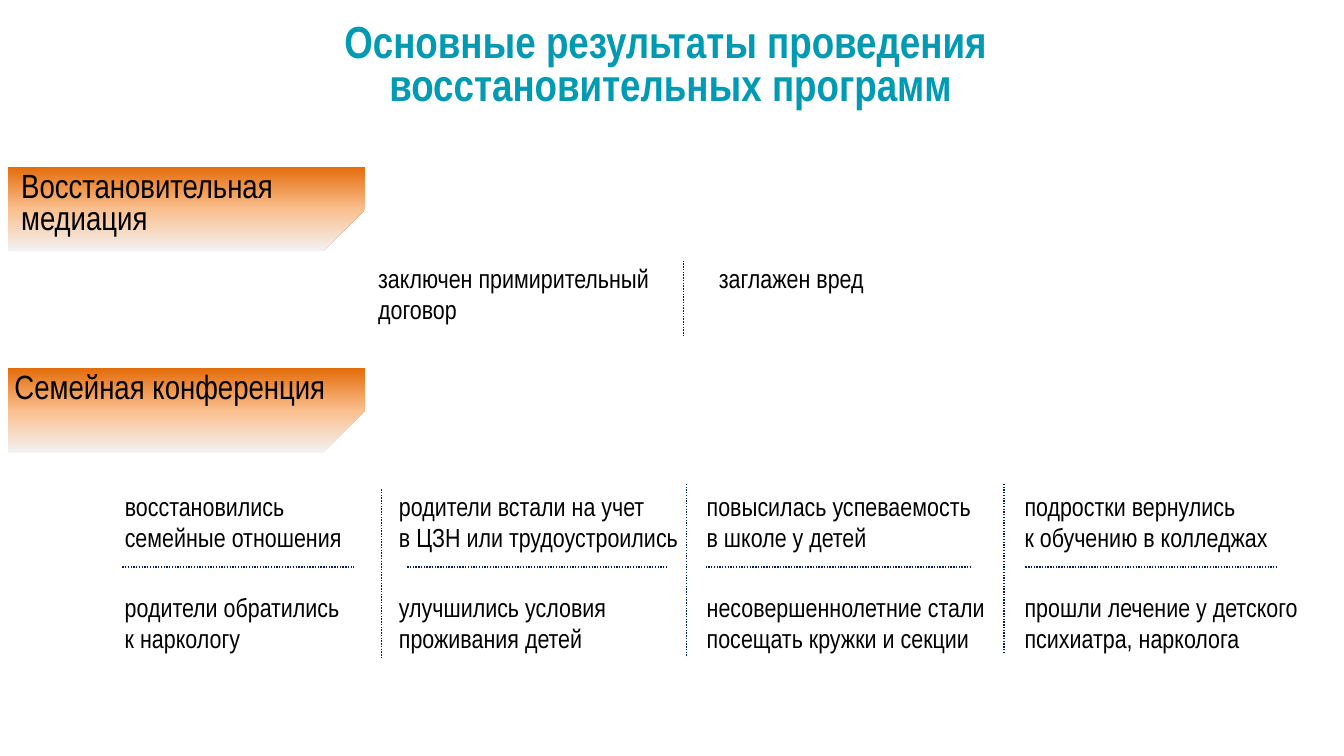
from lxml import etree
from pptx import Presentation
from pptx.dml.color import RGBColor
from pptx.enum.dml import MSO_LINE
from pptx.enum.shapes import MSO_CONNECTOR, MSO_SHAPE
from pptx.enum.text import MSO_ANCHOR, MSO_AUTO_SIZE, PP_ALIGN
from pptx.oxml.ns import qn
from pptx.util import Inches, Pt

STRAIGHT = MSO_CONNECTOR.STRAIGHT
SNIPPED = MSO_SHAPE.SNIP_1_RECTANGLE
DOTTED = MSO_LINE.ROUND_DOT
TOP = MSO_ANCHOR.TOP
GROW, FIXED = MSO_AUTO_SIZE.SHAPE_TO_FIT_TEXT, MSO_AUTO_SIZE.NONE
LEFT, CENTER = PP_ALIGN.LEFT, PP_ALIGN.CENTER

FONT = "Arial Narrow"
TEAL, NAVY, BLACK = "009AB3", "002060", "000000"
BANNER_STOPS = [(0, "E46C0A"), (51, "FAC090"), (100, "F2F2F2")]
COLUMNS, ROWS = 100, 56.25  # grid of the slide, 0.1 inch a cell
BANNER_LEFT, BANNER_WIDTH, BANNER_HEIGHT = 0.6, 26.6, 6.3
RESULT_ROWS = (36, 43.5)
RESULT_HEIGHT = 5.7

# left edge, then (width, lines) of the upper and the lower result
RESULTS = [
    (8.3, (18.5, ["восстановились", "семейные отношения"]),
          (18.6, ["родители обратились", "к наркологу"])),
    (28.7, (24.5, ["родители встали на учет", "в ЦЗН или трудоустроились"]),
           (19.5, ["улучшились условия", "проживания детей"])),
    (51.6, (22.4, ["повысилась успеваемость", "в школе у детей"]),
           (23.5, ["несовершеннолетние стали", "посещать кружки и секции"])),
    (75.25, (20.4, ["подростки вернулись", "к обучению в колледжах"]),
            (23.2, ["прошли лечение у детского", "психиатра, нарколога"])),
]
COLUMN_DIVIDERS = [(28.4, 36.4, 48.9), (51.1, 36, 48.9), (74.7, 36, 48.5)]
ROW_DIVIDERS = [(9.1, 26.3), (30.3, 49.6), (52.5, 72.3), (76.3, 95)]


def rgb(hex_color):
    return RGBColor.from_string(hex_color)


def write(tf, lines, size=14, color=BLACK, bold=False, align=LEFT, spacing=None):
    for i, line in enumerate(lines):
        p = tf.paragraphs[0] if i == 0 else tf.add_paragraph()
        p.alignment = align
        p.line_spacing = spacing
        r = p.add_run()
        r.text = line
        r.font.name, r.font.size, r.font.bold = FONT, Pt(size), bold
        r.font.color.rgb = rgb(color)


class SlideBuilder:
    def __init__(self, prs):
        self.cell_w = prs.slide_width / COLUMNS
        self.cell_h = prs.slide_height / ROWS
        self.s = prs.slides.add_slide(prs.slide_layouts[5])

    def box(self, x, y, w, h):
        """Turn grid columns and rows into slide lengths."""
        return (round(x * self.cell_w), round(y * self.cell_h),
                round(w * self.cell_w), round(h * self.cell_h))

    def title(self, x, y, w, h, lines, **style):
        sp = self.s.shapes.title
        sp.left, sp.top, sp.width, sp.height = self.box(x, y, w, h)
        tf = sp.text_frame
        tf.word_wrap, tf.auto_size, tf.vertical_anchor = True, FIXED, TOP
        write(tf, lines, **style)

    def text(self, x, y, w, h, lines, wrap=True, **style):
        tf = self.s.shapes.add_textbox(*self.box(x, y, w, h)).text_frame
        tf.word_wrap, tf.auto_size = wrap, GROW
        write(tf, lines, **style)

    def divider(self, x1, y1, x2, y2):
        start_x, start_y, end_x, end_y = self.box(x1, y1, x2, y2)
        line = self.s.shapes.add_connector(STRAIGHT, start_x, start_y, end_x, end_y)
        line.line.color.rgb = rgb(NAVY)
        line.line.width = Pt(0.75)
        line.line.dash_style = DOTTED
        etree.SubElement(line._element.spPr, qn("a:effectLst"))

    def banner(self, y):
        """Orange band with its lower right corner cut off."""
        sp = self.s.shapes.add_shape(
            SNIPPED, *self.box(BANNER_LEFT, y, BANNER_WIDTH, BANNER_HEIGHT))
        sp.adjustments[0] = 0.5
        sp.shadow.inherit = False
        sp.line.fill.background()
        sp_pr = sp._element.spPr
        sp_pr.find(qn("a:xfrm")).set("flipV", "1")
        grad = etree.Element(qn("a:gradFill"), rotWithShape="0")
        stops = etree.SubElement(grad, qn("a:gsLst"))
        for percent, color in BANNER_STOPS:
            stop = etree.SubElement(stops, qn("a:gs"), pos=str(percent * 1000))
            etree.SubElement(stop, qn("a:srgbClr"), val=color)
        etree.SubElement(grad, qn("a:lin"), ang="16200000", scaled="0")
        sp_pr.find(qn("a:prstGeom")).addnext(grad)


def main():
    prs = Presentation()
    prs.slide_width = Inches(10)
    prs.slide_height = prs.slide_width * 9 // 16
    slide = SlideBuilder(prs)
    slide.title(-0.1, 1.3, 100, 7.5,
                ["Основные результаты проведения ", "восстановительных программ"],
                size=24, color=TEAL, bold=True, align=CENTER, spacing=0.8)

    slide.banner(12.4)
    slide.text(BANNER_LEFT, 12.35, BANNER_WIDTH, 5.9,
               ["Восстановительная медиация"], size=18, spacing=0.8)
    slide.text(27.15, 19, 22.2, RESULT_HEIGHT, ["заключен примирительный договор"])
    slide.text(52.5, 19, 13, 3.4, ["заглажен вред"], wrap=False)
    slide.divider(50.85, 19.4, 50.85, 25)

    slide.banner(27.4)
    slide.text(0.1, 27.3, BANNER_WIDTH, 3.4,
               ["Семейная конференция"], size=18, spacing=0.8)
    for x, *cells in RESULTS:
        for y, (w, lines) in zip(RESULT_ROWS, cells):
            slide.text(x, y, w, RESULT_HEIGHT, lines, wrap=False)
    for x, top, bottom in COLUMN_DIVIDERS:
        slide.divider(x, top, x, bottom)
    for left, right in ROW_DIVIDERS:
        slide.divider(left, 42.2, right, 42.2)
    prs.save("out.pptx")


if __name__ == "__main__":
    main()
